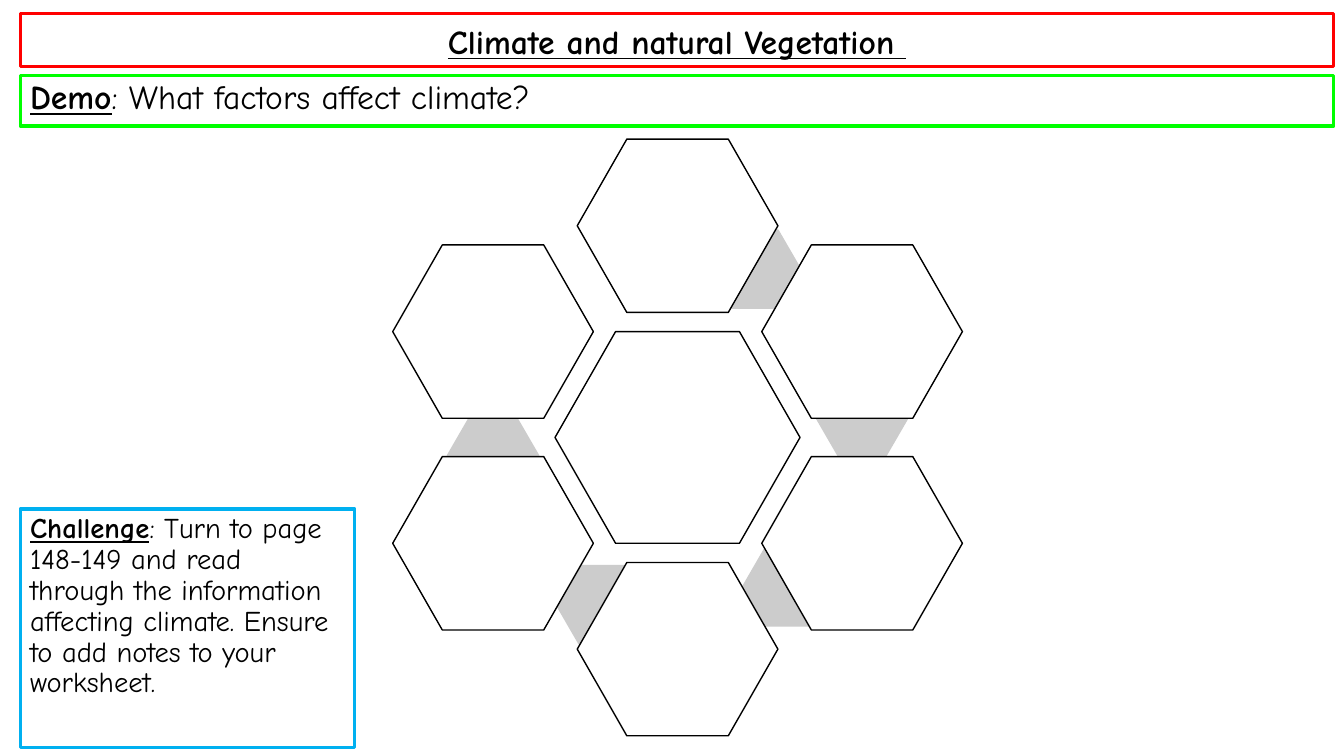
from dataclasses import dataclass
from typing import Optional

from pptx import Presentation
from pptx import util as u
from pptx.dml.color import RGBColor
from pptx.enum import shapes, text

SLIDE_W, SLIDE_H = 13.33, 7.5
FONT = "Comic Neue"
BLACK, WHITE, GREY = "000000", "FFFFFF", "CCCCCC"

# Honeycomb grid: centre of the ring, and its column and row steps in inches
CENTRE_X, CENTRE_Y = 6.72, 4.34
COL, ROW = 1.83, 1.05


@dataclass
class Frame:
    """A bordered text box, placed in percent of the slide's size."""
    top: float
    width: float
    height: float
    border: str
    heading: str
    body: str
    size: float
    fill: Optional[str] = None
    title: bool = False
    hanging: float = 0


@dataclass
class HexStyle:
    width: float
    height: float
    adj: float
    fill: str
    line: Optional[str] = None


@dataclass
class Hexagon:
    """A hexagon centred on a column and row counted from the ring's centre."""
    col: float
    row: float
    style: HexStyle


HUB = HexStyle(2.43, 2.1, 0.286, WHITE, BLACK)
CELL = HexStyle(1.99, 1.72, 0.286, WHITE, BLACK)
LINK = HexStyle(0.92, 0.79, 0.289, GREY)

HEXAGONS = [
    Hexagon(0, 0, HUB),
    Hexagon(0.42, -1.59, LINK),
    Hexagon(0, -2, CELL),
    Hexagon(1, -0.18, LINK),
    Hexagon(1, -1, CELL),
    Hexagon(0.6, 1.41, LINK),
    Hexagon(1, 1, CELL),
    Hexagon(-0.41, 1.58, LINK),
    Hexagon(0, 2, CELL),
    Hexagon(-1, 0.17, LINK),
    Hexagon(-1, 1, CELL),
    Hexagon(-1, -1, CELL),
]

FRAME_LEFT = 1.5
HEADERS = [
    Frame(1.73, 97.75, 7.07, "FF0000", "Climate and natural Vegetation ", "",
          24, fill=WHITE, title=True),
    Frame(10, 97.75, 6.67, "00FF00", "Demo",
          ": What factors affect climate?", 24, hanging=0.25),
]
CHALLENGE = Frame(
    67.33, 24.91, 31.6, "00B0F0", "Challenge",
    ": Turn to page 148-149 and read through the information affecting "
    "climate. Ensure to add notes to your worksheet.", 20.4)


def colour(value: str) -> RGBColor:
    return RGBColor.from_string(value)


def across(percent: float) -> int:
    return u.Inches(SLIDE_W * percent / 100)


def down(percent: float) -> int:
    return u.Inches(SLIDE_H * percent / 100)


def paint(sp, fill: Optional[str], line: Optional[str], weight: float) -> None:
    sp.shadow.inherit = False
    if fill:
        sp.fill.solid()
        sp.fill.fore_color.rgb = colour(fill)
    else:
        sp.fill.background()
    if line:
        sp.line.color.rgb = colour(line)
        sp.line.width = u.Pt(weight)
    else:
        sp.line.fill.background()


def draw_hexagon(s, hexagon: Hexagon) -> None:
    style = hexagon.style
    left = CENTRE_X + hexagon.col * COL - style.width / 2
    top = CENTRE_Y + hexagon.row * ROW - style.height / 2
    sp = s.shapes.add_shape(
        shapes.MSO_SHAPE.HEXAGON, u.Inches(left), u.Inches(top),
        u.Inches(style.width), u.Inches(style.height))
    sp.adjustments[0] = style.adj
    paint(sp, style.fill, style.line, 1)


def draw_frame(s, frame: Frame) -> None:
    sp = s.shapes.add_shape(
        shapes.MSO_SHAPE.RECTANGLE, across(FRAME_LEFT), down(frame.top),
        across(frame.width), down(frame.height))
    paint(sp, frame.fill, frame.border, 2.25)

    tf = sp.text_frame
    tf.word_wrap = True
    tf.vertical_anchor = (text.MSO_ANCHOR.BOTTOM if frame.title
                          else text.MSO_ANCHOR.TOP)
    p = tf.paragraphs[0]
    p.alignment = text.PP_ALIGN.CENTER if frame.title else text.PP_ALIGN.LEFT
    p.line_spacing = 0.9
    p.font.name = FONT
    p.font.size = u.Pt(frame.size)
    p.font.color.rgb = colour(BLACK)
    if frame.hanging:
        p.space_before = u.Pt(10)
        pPr = p._p.get_or_add_pPr()
        pPr.set("marL", str(u.Inches(frame.hanging)))
        pPr.set("indent", str(-u.Inches(frame.hanging)))

    # Bold underlined heading, then plain body
    r = p.add_run()
    r.text = frame.heading
    r.font.bold = r.font.underline = True
    if frame.body:
        p.add_run().text = frame.body


def main() -> None:
    prs = Presentation()
    prs.slide_width, prs.slide_height = u.Inches(SLIDE_W), u.Inches(SLIDE_H)
    s = prs.slides.add_slide(prs.slide_layouts[6])

    # Title and question
    for frame in HEADERS:
        draw_frame(s, frame)

    # Honeycomb
    for hexagon in HEXAGONS:
        draw_hexagon(s, hexagon)

    # Task
    draw_frame(s, CHALLENGE)

    prs.save("out.pptx")


if __name__ == "__main__":
    main()
